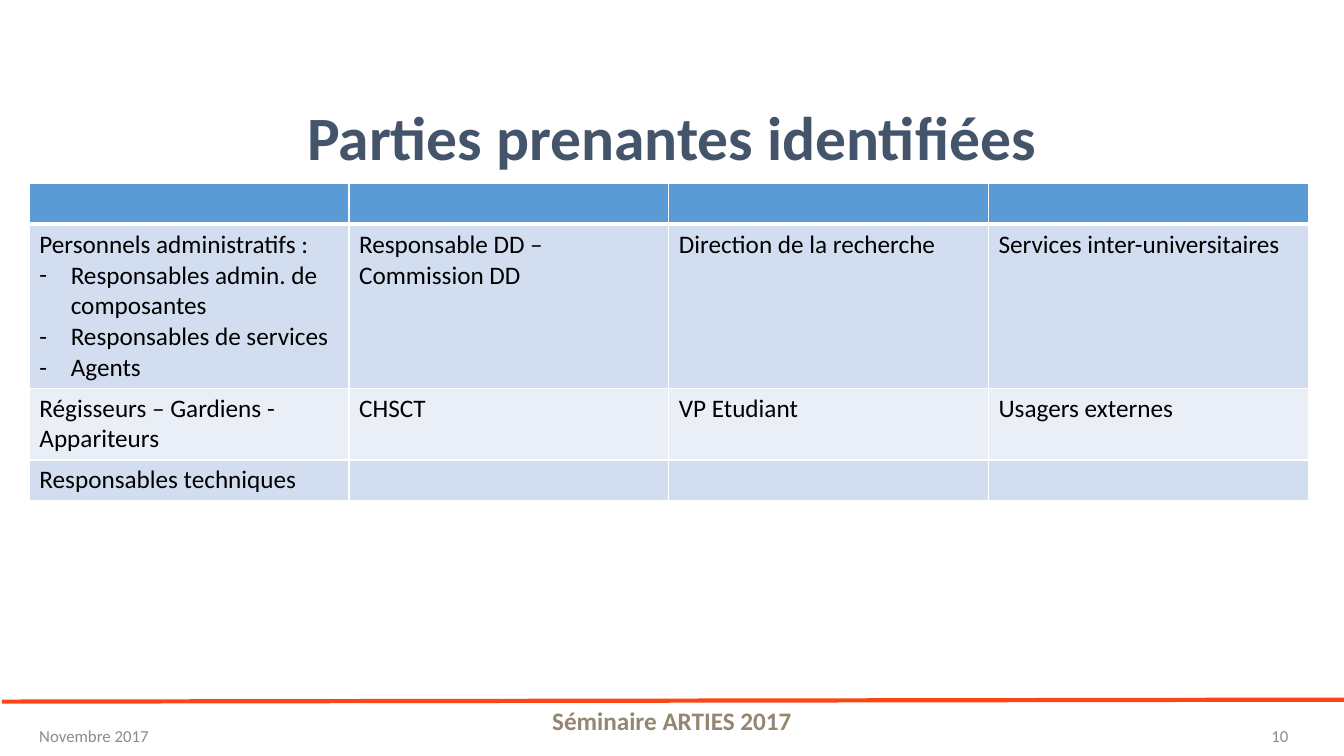
from lxml.etree import SubElement
from pptx import Presentation
from pptx.dml.color import RGBColor
from pptx.enum.shapes import MSO_CONNECTOR
from pptx.enum.text import MSO_ANCHOR, PP_ALIGN
from pptx.oxml.ns import qn
from pptx.util import Cm, Pt

COLORS = {
    "title": "44546A",
    "rule": "FB4615",
    "seminar": "948671",
    "footer": "8C8C8C",
    "text": "000000",
    "header": "5B9BD5",
    "band_dark": "D2DEEF",
    "band_light": "EAEFF7",
    "border": "FFFFFF",
}
FONT = "Calibri"
WIDTH, HEIGHT = 33.87, 19.05
ROW_HEIGHTS = [1.03, 4.13, 1.81, 1.03]
STAKEHOLDERS = [
    ["", "", "", ""],
    [
        "Personnels administratifs :\nResponsables admin. de composantes\n"
        "Responsables de services\nAgents",
        "Responsable DD – Commission DD",
        "Direction de la recherche",
        "Services inter-universitaires",
    ],
    ["Régisseurs – Gardiens - Appariteurs", "CHSCT", "VP Etudiant", "Usagers externes"],
    ["Responsables techniques", "", "", ""],
]


def color(name):
    return RGBColor.from_string(COLORS[name])


def format_font(font, size, color_name, bold=False):
    font.name = FONT
    font.size = Pt(size)
    font.bold = bold
    font.color.rgb = color(color_name)


def add_label(slide, box, text, size, color_name, alignment, bold=False):
    shape = slide.shapes.add_textbox(*(Cm(length) for length in box))
    text_frame = shape.text_frame
    text_frame.word_wrap = True
    text_frame.vertical_anchor = MSO_ANCHOR.MIDDLE
    text_frame.text = text
    paragraph = text_frame.paragraphs[0]
    paragraph.alignment = alignment
    format_font(paragraph.runs[0].font, size, color_name, bold)
    return paragraph


def add_title(slide, box):
    paragraph = add_label(
        slide, box, "Parties prenantes identifiées", 44, "title", PP_ALIGN.CENTER, True
    )
    paragraph.line_spacing = 0.9


def add_dash(paragraph):
    properties = paragraph._p.get_or_add_pPr()
    properties.set("marL", str(Cm(0.79)))
    properties.set("indent", str(Cm(-0.79)))
    SubElement(properties, qn("a:buFont"), typeface=FONT)
    SubElement(properties, qn("a:buChar"), char="-")


def add_borders(cell, top, bottom):
    properties = cell._tc.get_or_add_tcPr()
    for side, points in (("L", 1), ("R", 1), ("T", top), ("B", bottom)):
        line = SubElement(properties, qn(f"a:ln{side}"), w=str(Pt(points)))
        fill = SubElement(line, qn("a:solidFill"))
        SubElement(fill, qn("a:srgbClr"), val=COLORS["border"])


def fill_cell(cell, text, row):
    add_borders(cell, 3 if row == 1 else 1, 3 if row == 0 else 1)
    cell.fill.solid()
    band = "band_dark" if row % 2 else "band_light"
    cell.fill.fore_color.rgb = color(band if row else "header")
    cell.text_frame.text = text
    for index, paragraph in enumerate(cell.text_frame.paragraphs):
        if index:
            add_dash(paragraph)
        format_font(paragraph.font, 18, "text")
        for run in paragraph.runs:
            format_font(run.font, 18, "text")


def add_stakeholder_table(slide, box):
    frame = slide.shapes.add_table(
        len(STAKEHOLDERS), len(STAKEHOLDERS[0]), *(Cm(length) for length in box)
    )
    table = frame.table
    for row, texts in enumerate(STAKEHOLDERS):
        table.rows[row].height = Cm(ROW_HEIGHTS[row])
        for column, text in enumerate(texts):
            fill_cell(table.cell(row, column), text, row)


def add_footer(slide, box):
    left, top, width, height = box
    rule = slide.shapes.add_connector(
        MSO_CONNECTOR.STRAIGHT,
        Cm(left + 0.05), Cm(top + 0.05), Cm(left + width + 0.04), Cm(top),
    )
    rule.line.color.rgb = color("rule")
    rule.line.width = Pt(3)
    SubElement(rule._element.spPr, qn("a:effectLst"))

    label_height = 1.02
    label_top = top + height - label_height
    add_label(slide, (left + 0.74, label_top, 7.62, label_height),
              "Novembre 2017", 12, "footer", PP_ALIGN.LEFT)
    add_label(slide, (left + 2.33, top + 0.02, width - 4.66, label_height),
              "Séminaire ARTIES 2017", 18, "seminar", PP_ALIGN.CENTER, True)
    add_label(slide, (left + width - 8.77, label_top, 7.62, label_height),
              "10", 12, "footer", PP_ALIGN.RIGHT)


def main():
    presentation = Presentation()
    presentation.slide_width = Cm(WIDTH)
    presentation.slide_height = Cm(HEIGHT)
    slide = presentation.slides.add_slide(presentation.slide_layouts[6])
    add_footer(slide, (0, 17.63, WIDTH, 1.42))
    add_title(slide, (2.33, 1.7, 29.21, 3.68))
    add_stakeholder_table(slide, (0.74, 4.62, 32.23, sum(ROW_HEIGHTS)))
    presentation.save("out.pptx")


if __name__ == "__main__":
    main()
